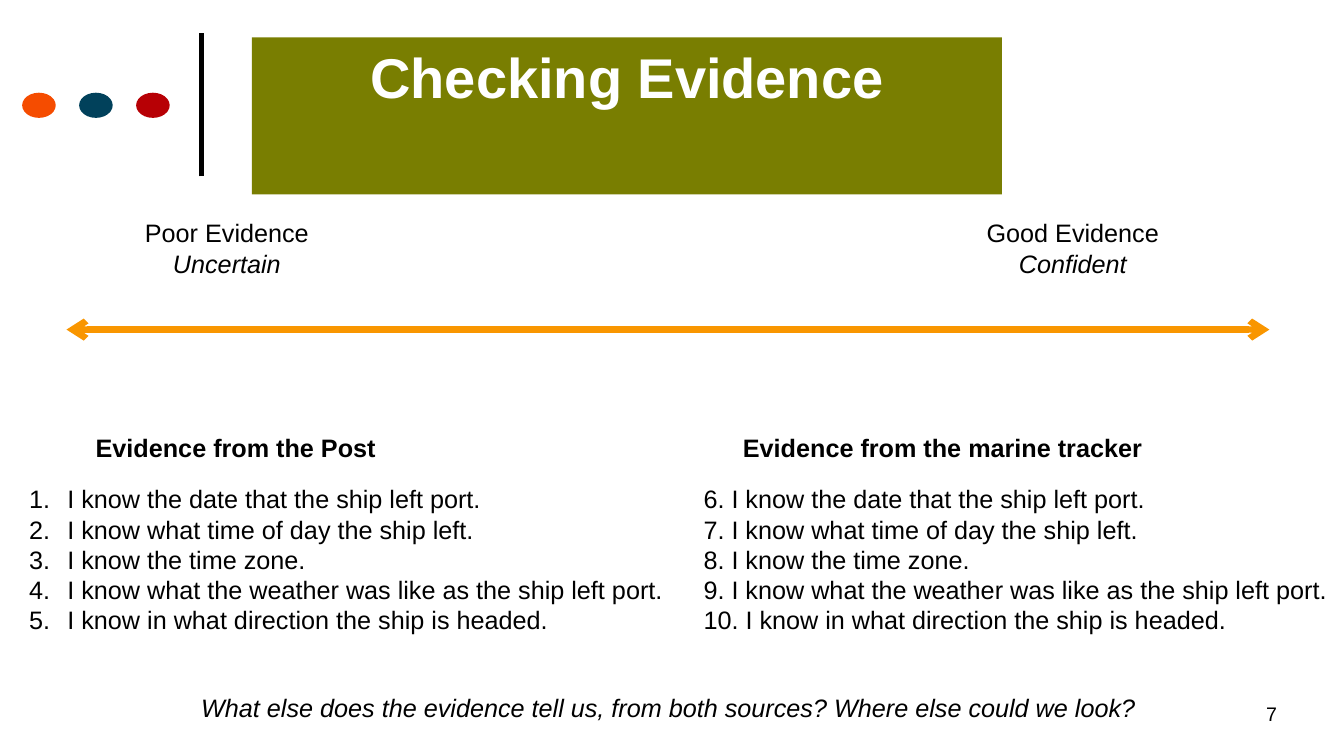
import pptx
import pptx.util
import pptx.dml.color
import pptx.enum.shapes
import pptx.enum.text
from lxml import etree

RGBColor = pptx.dml.color.RGBColor
Pt = pptx.util.Pt
ALIGN = pptx.enum.text.PP_ALIGN
SHAPE = pptx.enum.shapes.MSO_SHAPE

BLACK = RGBColor(0x00, 0x00, 0x00)
WHITE = RGBColor(0xFF, 0xFF, 0xFF)
OLIVE = RGBColor(0x79, 0x7E, 0x01)
AMBER = RGBColor(0xF9, 0x96, 0x00)
DOT_COLOURS = [RGBColor(0xF5, 0x4C, 0x00), RGBColor(0x01, 0x41, 0x5B), RGBColor(0xB7, 0x00, 0x05)]

# All places are percentages of the slide's width and height.
TITLE = "Checking Evidence"
TITLE_BOX = (18.75, 4.93, 55.8, 20.8)
SCALE_ENDS = [
    (8.63, "Poor Evidence", "Uncertain"),
    (71.57, "Good Evidence", "Confident"),
]
SOURCES = [
    {"heading": "Evidence from the Post", "heading_x": 6.38, "x": 1.43, "width": 48.69,
     "numbered": True,
     "facts": ["I know the date that the ship left port.",
               "I know what time of day the ship left.",
               "I know the time zone.",
               "I know what the weather was like as the ship left port.",
               "I know in what direction the ship is headed."]},
    {"heading": "Evidence from the marine tracker", "heading_x": 54.54, "x": 51.61, "width": 48.39,
     "numbered": False,
     "facts": ["6. I know the date that the ship left port.",
               "7. I know what time of day the ship left.",
               "8. I know the time zone.",
               "9. I know what the weather was like as the ship left port.",
               "10. I know in what direction the ship is headed."]},
]
QUESTION = "What else does the evidence tell us, from both sources? Where else could we look?"
PAGE = "7"

prs = pptx.Presentation()
prs.slide_width = pptx.util.Inches(13.33)
prs.slide_height = pptx.util.Inches(7.5)
s = prs.slides.add_slide(prs.slide_layouts[5])


def place(x, y, *size):
    """Turn percentages of the slide into lengths, across and down in turn."""
    sides = (prs.slide_width, prs.slide_height) * 2
    return [int(side * share / 100) for side, share in zip(sides, (x, y, *size))]


def style(p, size=18, colour=BLACK, bold=False, italic=False):
    p.font.name = "Arial"
    p.font.size = Pt(size)
    p.font.color.rgb = colour
    p.font.bold = bold
    p.font.italic = italic


def add_child(parent, tag, **attributes):
    etree.SubElement(parent, pptx.oxml.ns.qn(tag), **attributes)


def add_text(box, lines, align=ALIGN.LEFT, numbered=False, italic_from=None, **font):
    tf = s.shapes.add_textbox(*place(*box)).text_frame
    tf.word_wrap = True
    for i, line in enumerate(lines):
        p = tf.paragraphs[0] if i == 0 else tf.add_paragraph()
        p.text = line
        p.alignment = align
        if numbered:
            pPr = p._p.get_or_add_pPr()
            pPr.set("marL", str(pptx.util.Inches(0.38)))
            pPr.set("indent", str(-pptx.util.Inches(0.38)))
            add_child(pPr, "a:buFont", typeface="+mj-lt")
            add_child(pPr, "a:buAutoNum", type="arabicPeriod")
        style(p, italic=italic_from is not None and i >= italic_from, **font)


def add_line(start, end, colour, width):
    line = s.shapes.add_connector(pptx.enum.shapes.MSO_CONNECTOR.STRAIGHT,
                                  *place(*start), *place(*end))
    line.line.color.rgb = colour
    line.line.width = Pt(width)
    add_child(line._element.spPr, "a:effectLst")
    return line


# Side ornament
add_line((15, 23.33), (15, 4.4), BLACK, 3)
for i, colour in enumerate(DOT_COLOURS):
    dot = s.shapes.add_shape(SHAPE.OVAL, *place(1.65 + 4.24 * i, 12.27, 2.5, 3.33))
    dot.shadow.inherit = False
    dot.fill.solid()
    dot.fill.fore_color.rgb = colour
    dot.line.fill.background()

# Title band
title = s.shapes.title
title.left, title.top, title.width, title.height = place(*TITLE_BOX)
title.fill.solid()
title.fill.fore_color.rgb = OLIVE
tf = title.text_frame
tf.text = TITLE
tf.auto_size = pptx.enum.text.MSO_AUTO_SIZE.NONE
tf.vertical_anchor = pptx.enum.text.MSO_ANCHOR.TOP
tf.margin_top = pptx.util.Inches(0.05)
tf.paragraphs[0].alignment = ALIGN.CENTER
style(tf.paragraphs[0], size=40, colour=WHITE, bold=True)

# Scale from poor to good evidence
scale = add_line((4.95, 43.6), (94.45, 43.6), AMBER, 4.5)
for end in ("a:headEnd", "a:tailEnd"):
    add_child(scale.line._get_or_add_ln(), end, type="arrow")
for x, quality, feeling in SCALE_ENDS:
    add_text((x, 28.13, 16.5, 9.47), [quality, feeling], ALIGN.CENTER, italic_from=1)

# Evidence from each source
for source in SOURCES:
    add_text((source["heading_x"], 56.53, 33, 5.33), [source["heading"]], bold=True)
    add_text((source["x"], 63.33, source["width"], 21.6), source["facts"],
             numbered=source["numbered"])

add_text((13.35, 90.93, 72.77, 5.33), [QUESTION], ALIGN.CENTER, italic_from=0)
add_text((93.47, 92.13, 5.78, 6.67), [PAGE], size=14)

prs.save("out.pptx")
